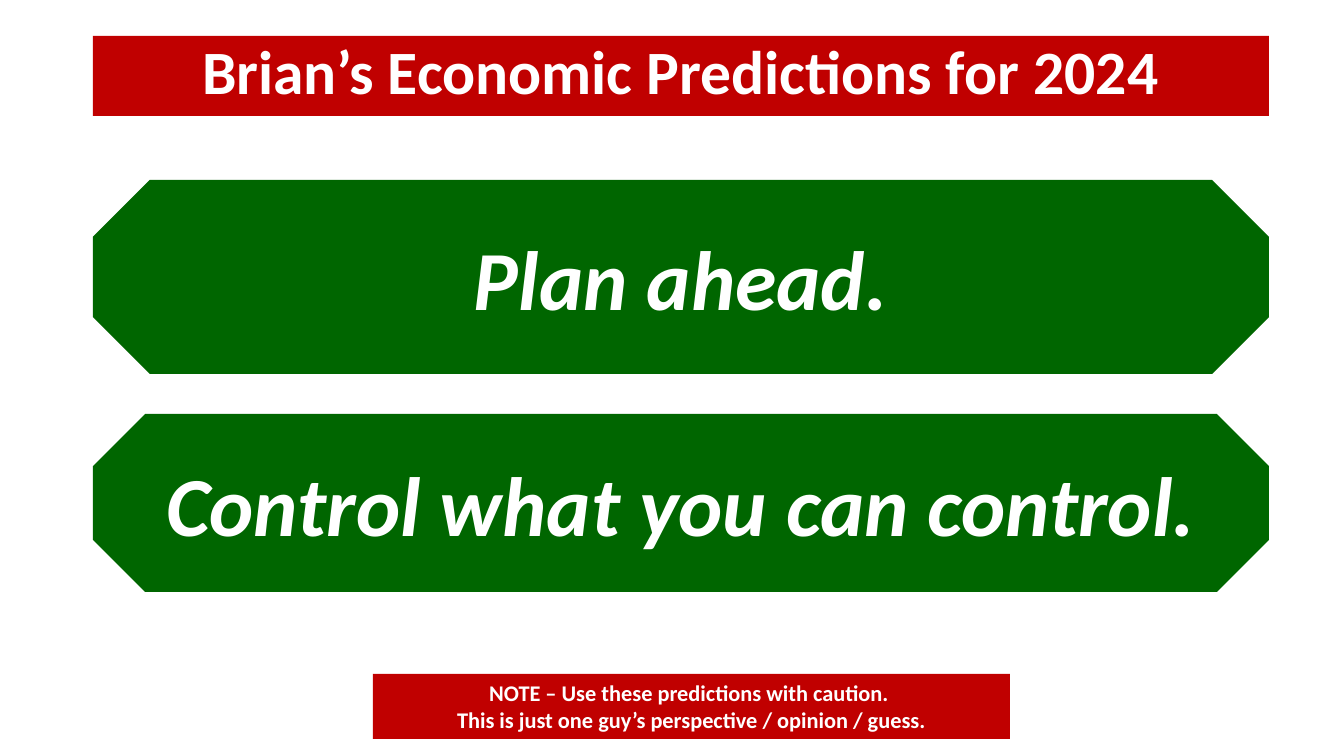
from pptx import Presentation
from pptx.dml.color import RGBColor
from pptx.enum.shapes import MSO_SHAPE
from pptx.enum.text import MSO_ANCHOR, PP_ALIGN
from pptx.util import Emu, Pt

RECT, OCTAGON = MSO_SHAPE.RECTANGLE, MSO_SHAPE.OCTAGON
TOP, MIDDLE = MSO_ANCHOR.TOP, MSO_ANCHOR.MIDDLE
CENTER = PP_ALIGN.CENTER

RED = RGBColor(0xC0, 0x00, 0x00)
GREEN = RGBColor(0x00, 0x66, 0x00)
WHITE = RGBColor(0xFF, 0xFF, 0xFF)

LEFT, WIDTH = 93, 1176


def px(count):
    """Turn pixels, 100.8 to the inch, into EMU."""
    return Emu(round(count * 914400 / 100.8))


def add_panel(slide, kind, box, fill, text, size, anchor):
    """Add a borderless shape with bold white centred text."""
    panel = slide.shapes.add_shape(kind, *map(px, box))
    panel.shadow.inherit = False
    panel.fill.solid()
    panel.fill.fore_color.rgb = fill
    panel.line.fill.background()
    frame = panel.text_frame
    frame.word_wrap = True
    frame.vertical_anchor = anchor
    frame.text = text
    para = frame.paragraphs[0]
    para.alignment = CENTER
    for run in para.runs:
        font = run.font
        font.name = "Calibri"
        font.size = Pt(size)
        font.bold = True
        font.color.rgb = WHITE
    return para


def add_banner(slide, box, text, size):
    return add_panel(slide, RECT, box, RED, text, size, TOP)


def add_advice(slide, top, height, text):
    box = (LEFT, top, WIDTH, height)
    para = add_panel(slide, OCTAGON, box, GREEN, text, 60, MIDDLE)
    para.runs[0].font.italic = True


def main():
    deck = Presentation()
    deck.slide_width, deck.slide_height = px(1344), px(756)
    slide = deck.slides.add_slide(deck.slide_layouts[6])

    title = add_banner(slide, (LEFT, 36, WIDTH, 80),
                       "Brian’s Economic Predictions for 2024", 44)
    title.line_spacing = 0.9
    add_advice(slide, 180, 194, "Plan ahead.")
    add_advice(slide, 414, 178, "Control what you can control.")
    add_banner(slide, (373, 674, 637, 65),
               "NOTE – Use these predictions with caution. \v"
               "This is just one guy’s perspective / opinion / guess.", 16)

    deck.save("out.pptx")


if __name__ == "__main__":
    main()
